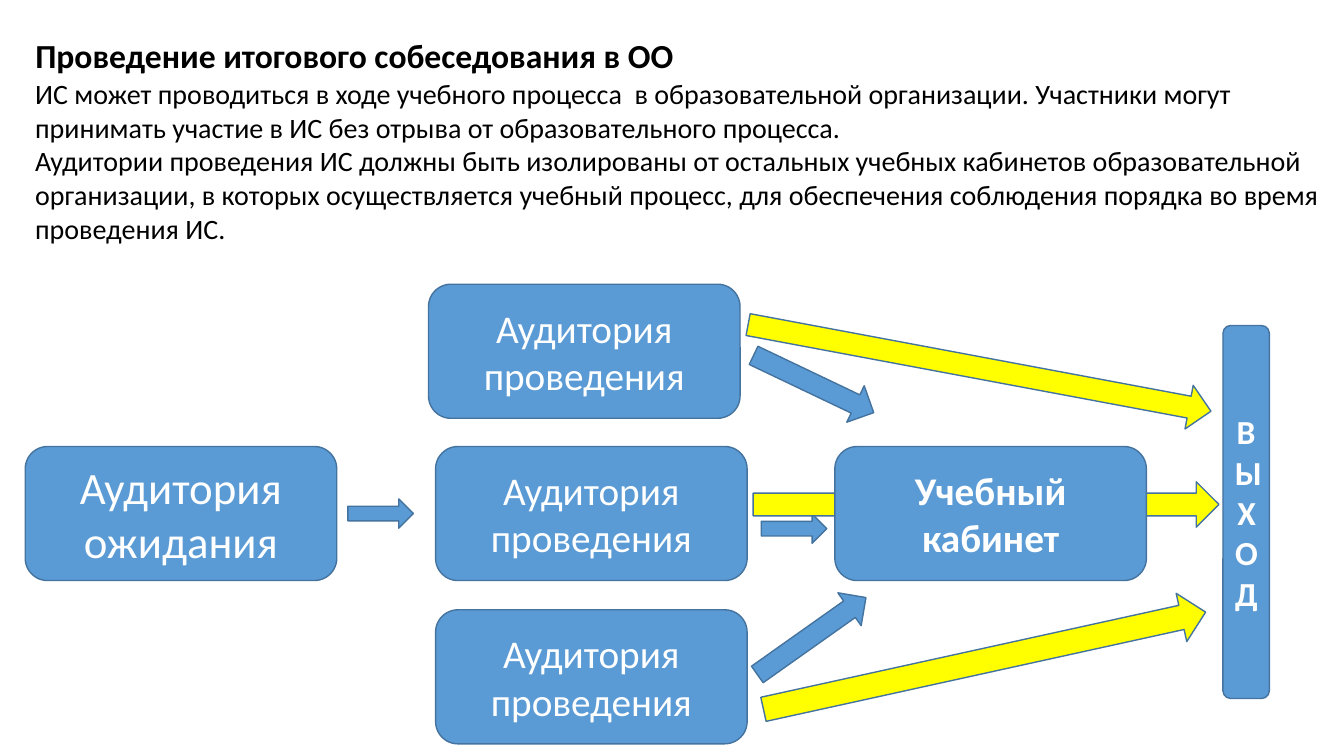
from dataclasses import dataclass

from pptx import Presentation
from pptx import util as u
from pptx.dml.color import RGBColor
from pptx.enum import shapes, text

BLUE = RGBColor(0x5B, 0x9B, 0xD5)
EDGE = RGBColor(0x43, 0x73, 0x9E)
YELLOW = RGBColor(0xFF, 0xFF, 0x00)
WHITE = RGBColor(0xFF, 0xFF, 0xFF)
BLACK = RGBColor(0x00, 0x00, 0x00)
FONT = "Calibri"

TITLE = "Проведение итогового собеседования в ОО"
BODY = (
    "ИС может проводиться в ходе учебного процесса  в образовательной "
    "организации. Участники могут принимать участие в ИС без отрыва от "
    "образовательного процесса.\n"
    "Аудитории проведения ИС должны быть изолированы от остальных учебных "
    "кабинетов образовательной организации, в которых осуществляется учебный "
    "процесс, для обеспечения соблюдения порядка во время проведения ИС."
)
EXAM = "Аудитория проведения"


@dataclass
class Room:
    label: str
    left: float
    top: float
    size: int = 28
    bold: bool = False
    width: float = 3.09
    height: float = 1.33


@dataclass
class Arrow:
    left: float
    top: float
    width: float
    height: float
    turn: float = 0
    fill: RGBColor = BLUE


ROOMS = [
    Room("Аудитория ожидания", 0.25, 4.43, size=32),
    Room(EXAM, 4.32, 6.05),
    Room(EXAM, 4.32, 4.43),
    Room(EXAM, 4.25, 2.82),
    Room("ВЫХОД", 12.13, 3.23, 24, True, 0.46, 3.7),
]
ARROWS = [
    Arrow(3.45, 4.95, 0.65, 0.29),
    Arrow(7.55, 5.1, 0.65, 0.29),
    Arrow(7.39, 6.11, 1.32, 0.4, -35.3),
    Arrow(7.41, 3.61, 1.32, 0.4, 25.5),
    Arrow(7.47, 4.78, 4.62, 0.45, fill=YELLOW),
    Arrow(7.52, 6.31, 4.49, 0.49, -12.4, YELLOW),
    Arrow(7.38, 3.43, 4.67, 0.44, 10.6, YELLOW),
]
# Stands in front of the middle yellow arrow
CLASS = Room("Учебный кабинет", 8.28, 4.43, bold=True)


def style(frame, size: int, color: RGBColor, bold: bool, align) -> None:
    frame.word_wrap = True
    for para in frame.paragraphs:
        para.alignment = align
        para.line_spacing = 1.0
        for run in para.runs:
            font = run.font
            font.name, font.size, font.bold = FONT, u.Pt(size), bold
            font.color.rgb = color


def add_form(slide, kind, item: Room | Arrow, fill: RGBColor):
    """Add a filled, outlined preset shape at the item's place."""
    form = slide.shapes.add_shape(
        kind, u.Inches(item.left), u.Inches(item.top),
        u.Inches(item.width), u.Inches(item.height))
    form.shadow.inherit = False
    form.fill.solid()
    form.fill.fore_color.rgb = fill
    form.line.color.rgb = EDGE
    form.line.width = u.Pt(1)
    return form


def add_room(slide, room: Room) -> None:
    form = add_form(slide, shapes.MSO_SHAPE.ROUNDED_RECTANGLE, room, BLUE)
    frame = form.text_frame
    frame.text = room.label
    frame.vertical_anchor = text.MSO_ANCHOR.MIDDLE
    style(frame, room.size, WHITE, room.bold, text.PP_ALIGN.CENTER)


def add_arrow(slide, arrow: Arrow) -> None:
    form = add_form(slide, shapes.MSO_SHAPE.RIGHT_ARROW, arrow, arrow.fill)
    form.rotation = arrow.turn


def add_head(slide) -> None:
    """Fill the title and set the body text directly below it."""
    title = slide.shapes.title
    title.left, title.top = u.Inches(0.25), u.Inches(0.3)
    title.width, title.height = u.Inches(12.94), u.Inches(0.46)
    head = title.text_frame
    head.text = TITLE
    head.auto_size = text.MSO_AUTO_SIZE.NONE
    head.vertical_anchor = text.MSO_ANCHOR.TOP
    head.margin_bottom = 0
    style(head, 24, BLACK, True, text.PP_ALIGN.LEFT)

    box = slide.shapes.add_textbox(
        title.left, title.top + title.height, title.width, u.Inches(1.73))
    body = box.text_frame
    body.text = BODY
    body.margin_top = 0
    style(body, 20, BLACK, False, text.PP_ALIGN.LEFT)


def main() -> None:
    deck = Presentation()
    deck.slide_width, deck.slide_height = u.Inches(13.33), u.Inches(7.5)
    slide = deck.slides.add_slide(deck.slide_layouts.get_by_name("Title Only"))
    add_head(slide)
    for room in ROOMS:
        add_room(slide, room)
    for arrow in ARROWS:
        add_arrow(slide, arrow)
    add_room(slide, CLASS)
    deck.save("out.pptx")


if __name__ == "__main__":
    main()
